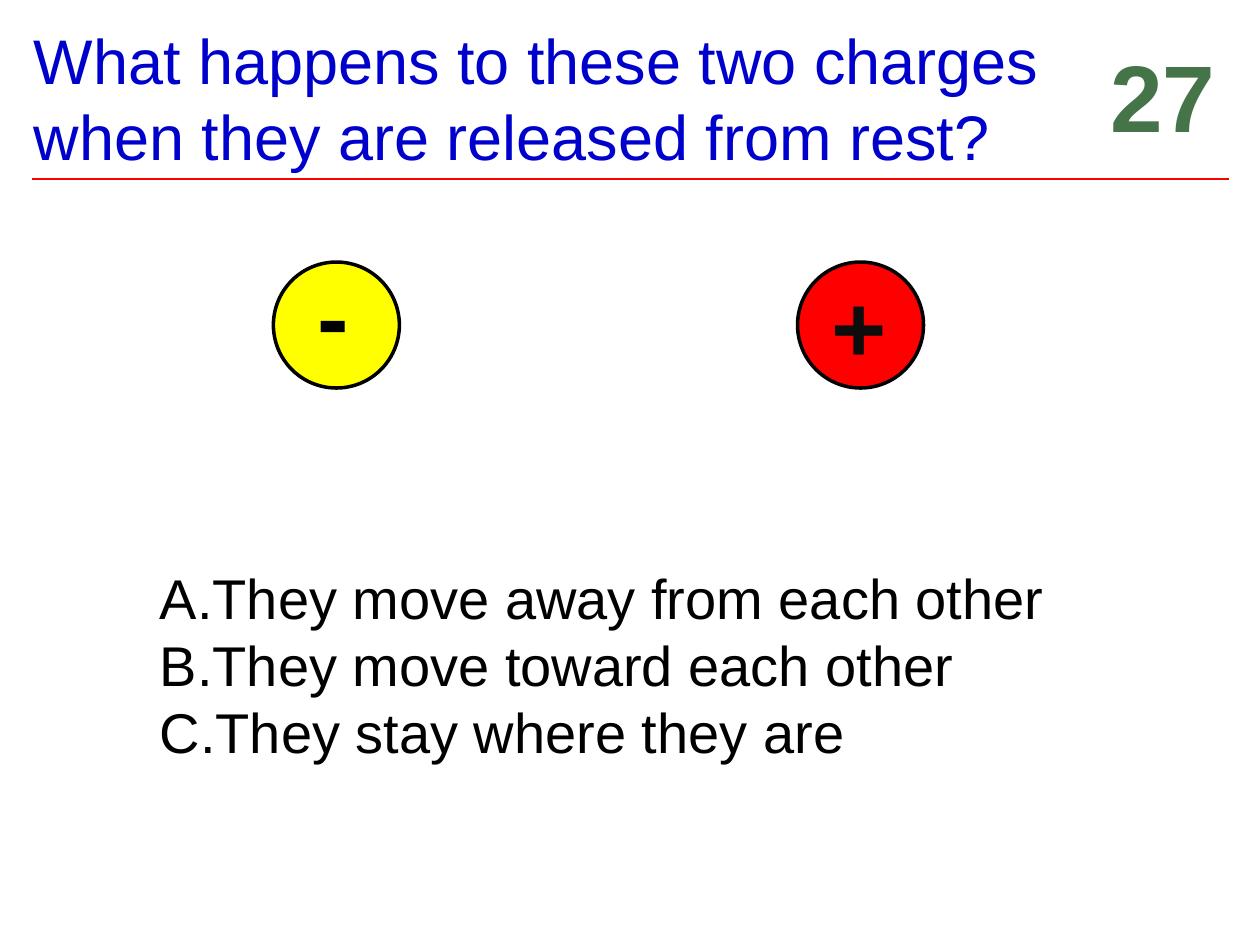
from dataclasses import dataclass

import pptx
import pptx.dml.color
import pptx.enum.shapes
import pptx.enum.text
import pptx.oxml
import pptx.oxml.ns
import pptx.util
from pptx.util import Inches

COLORS = {
    "title": "0000CC",
    "rule": "FF0000",
    "number": "457448",
    "negative": "FFFF00",
    "positive": "FF0000",
    "plus": "0D0D0D",
    "black": "000000",
}
FONT = "Arial"
ANSWERS = [
    "They move away from each other",
    "They move toward each other",
    "They stay where they are",
]


@dataclass
class Charge:
    left: float
    fill: str


@dataclass
class Label:
    text: str
    left: float
    top: float
    width: float
    color: str


CHARGES = [Charge(2.17, "negative"), Charge(6.33, "positive")]
LABELS = [
    Label("27", 8.71, 0.25, 1.04, "number"),
    Label("+", 6.5, 2.08, 0.64, "plus"),
    Label("-", 2.42, 1.99, 0.45, "black"),
]


def rgb(name: str) -> pptx.dml.color.RGBColor:
    return pptx.dml.color.RGBColor.from_string(COLORS[name])


def add_text(slide, text: str, box: tuple, size: float, color: str, wrap: bool = False):
    shape = slide.shapes.add_textbox(*map(Inches, box))
    text_frame = shape.text_frame
    text_frame.text = text
    text_frame.word_wrap = wrap
    if not wrap:
        text_frame.auto_size = pptx.enum.text.MSO_AUTO_SIZE.SHAPE_TO_FIT_TEXT
    for paragraph in text_frame.paragraphs:
        for run in paragraph.runs:
            run.font.name = FONT
            run.font.size = pptx.util.Pt(size)
            run.font.color.rgb = rgb(color)
    return text_frame


def add_rule(slide) -> None:
    connector = slide.shapes.add_connector(
        pptx.enum.shapes.MSO_CONNECTOR.STRAIGHT,
        Inches(0.25), Inches(1.42), Inches(9.75), Inches(1.42),
    )
    connector.line.color.rgb = rgb("rule")
    connector.line.width = pptx.util.Pt(1.5)
    properties = connector._element.spPr
    properties.append(pptx.oxml.parse_xml(f"<a:effectLst {pptx.oxml.ns.nsdecls('a')}/>"))


def add_charge(slide, charge: Charge) -> None:
    shape = slide.shapes.add_shape(
        pptx.enum.shapes.MSO_SHAPE.OVAL,
        Inches(charge.left), Inches(2.08), Inches(1), Inches(1),
    )
    shape.shadow.inherit = False
    shape.fill.solid()
    shape.fill.fore_color.rgb = rgb(charge.fill)
    shape.line.color.rgb = rgb("black")
    shape.line.width = pptx.util.Pt(2)


def add_label(slide, label: Label) -> None:
    box = (label.left, label.top, label.width, 1.01)
    paragraph = add_text(slide, label.text, box, 54, label.color).paragraphs[0]
    paragraph.alignment = pptx.enum.text.PP_ALIGN.CENTER
    run = paragraph.runs[0]
    run.font.bold = True
    outline = pptx.oxml.parse_xml(
        f'<a:ln {pptx.oxml.ns.nsdecls("a")} w="{pptx.util.Pt(1.42)}"><a:solidFill>'
        f'<a:srgbClr val="{COLORS["number"]}"/></a:solidFill></a:ln>'
    )
    run._r.get_or_add_rPr().insert(0, outline)


def add_answers(slide, answers: list[str]) -> None:
    text_frame = add_text(slide, "\n".join(answers), (1.17, 4.42, 7.27, 1.72), 32, "black")
    for paragraph in text_frame.paragraphs:
        properties = paragraph._p.get_or_add_pPr()
        properties.set("marL", str(Inches(0.38)))
        properties.set("indent", str(-Inches(0.38)))
        properties.append(pptx.oxml.parse_xml(
            f'<a:buAutoNum {pptx.oxml.ns.nsdecls("a")} type="alphaUcPeriod"/>'
        ))


def main() -> None:
    """Build the question slide about two charges released from rest."""
    presentation = pptx.Presentation()
    presentation.slide_width = Inches(10)
    presentation.slide_height = Inches(7.5)
    slide = presentation.slides.add_slide(presentation.slide_layouts[6])
    add_rule(slide)
    title = add_text(
        slide,
        "What happens to these two charges when they are released from rest?",
        (0.17, -0.08, 8.58, 1.5), 36, "title", wrap=True,
    )
    title.vertical_anchor = pptx.enum.text.MSO_ANCHOR.BOTTOM
    for charge in CHARGES:
        add_charge(slide, charge)
    for label in LABELS:
        add_label(slide, label)
    add_answers(slide, ANSWERS)
    presentation.save("out.pptx")


if __name__ == "__main__":
    main()
